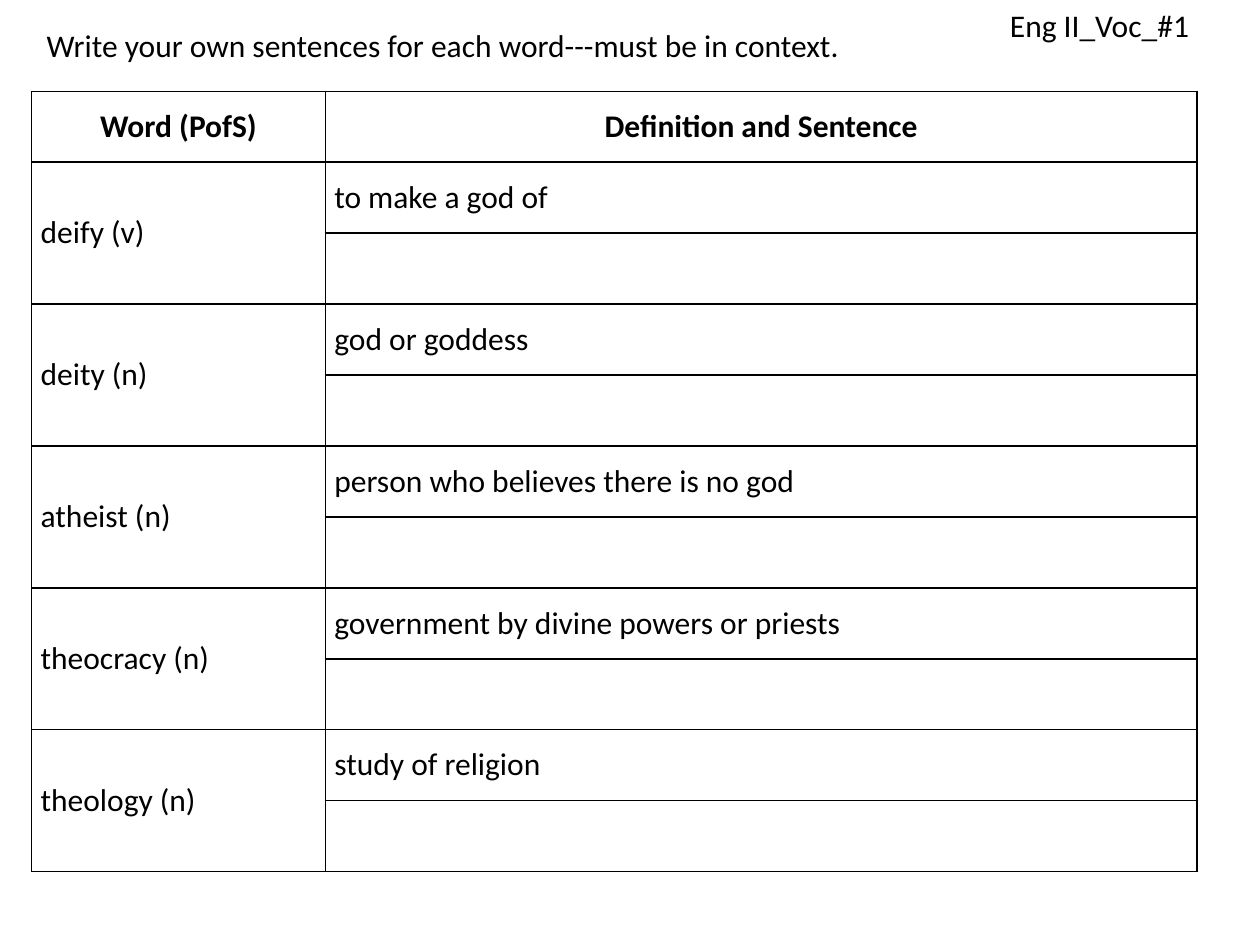
from lxml import etree
from pptx import Presentation
from pptx import util as u
from pptx.dml.color import RGBColor
from pptx.enum import text
from pptx.oxml import ns

BLACK = RGBColor(0, 0, 0)
WORDS = [
    ("deify (v)", "to make a god of"),
    ("deity (n)", "god or goddess"),
    ("atheist (n)", "person who believes there is no god"),
    ("theocracy (n)", "government by divine powers or priests"),
    ("theology (n)", "study of religion"),
]


class Sheet:
    font = {"name": "Calibri", "size": u.Pt(18)}
    border = u.Pt(1)

    def __init__(self, slide):
        self.s = slide

    def add_text(self, tf, content, bold=False, align=text.PP_ALIGN.LEFT):
        p = tf.paragraphs[0]
        p.alignment = align
        r = p.add_run()
        r.text = content
        for key, value in {**self.font, "bold": bold}.items():
            setattr(r.font, key, value)
        r.font.color.rgb = BLACK

    def label(self, content, x, y, w, h, wrap):
        sp = self.s.shapes.add_textbox(u.Cm(x), u.Cm(y), u.Cm(w), u.Cm(h))
        tf = sp.text_frame
        tf.word_wrap = wrap
        tf.auto_size = text.MSO_AUTO_SIZE.SHAPE_TO_FIT_TEXT
        self.add_text(tf, content)

    def outline(self, cell):
        tc_pr = cell._tc.get_or_add_tcPr()
        for i, side in enumerate(("lnL", "lnR", "lnT", "lnB")):
            ln = etree.Element(ns.qn(f"a:{side}"), w=str(self.border))
            fill = etree.SubElement(ln, ns.qn("a:solidFill"))
            etree.SubElement(fill, ns.qn("a:srgbClr"), val=str(BLACK))
            tc_pr.insert(i, ln)

    def cell(self, cell, content, inset, **style):
        layout = {
            "margin_left": u.Cm(inset),
            "margin_right": u.Cm(inset),
            "margin_top": 0,
            "margin_bottom": 0,
            "vertical_anchor": text.MSO_ANCHOR.MIDDLE,
        }
        for key, value in layout.items():
            setattr(cell, key, value)
        self.add_text(cell.text_frame, content, **style)

    def table(self, x, y, widths, row_height, headers, entries):
        rows = 1 + 2 * len(entries)
        sp = self.s.shapes.add_table(
            rows, len(widths), u.Cm(x), u.Cm(y),
            u.Cm(sum(widths)), u.Cm(rows * row_height))
        table = sp.table
        for flag in ("first_row", "horz_banding"):
            setattr(table, flag, False)
        for column, width in zip(table.columns, widths):
            column.width = u.Cm(width)
        for row in table.rows:
            row.height = u.Cm(row_height)
        for cell in table.iter_cells():
            cell.fill.background()
            self.outline(cell)
        for col, header in enumerate(headers):
            self.cell(table.cell(0, col), header, 0.1,
                      bold=True, align=text.PP_ALIGN.CENTER)
        for i, entry in enumerate(entries):
            top = 1 + 2 * i
            table.cell(top, 0).merge(table.cell(top + 1, 0))
            for col, content in enumerate(entry):
                self.cell(table.cell(top, col), content, 0.18)


def main():
    prs = Presentation()
    prs.slide_width, prs.slide_height = u.Cm(25.4), u.Cm(19.05)
    sheet = Sheet(prs.slides.add_slide(prs.slide_layouts[6]))
    sheet.table(0.64, 1.84, (5.92, 17.57), 1.43,
                ("Word (PofS)", "Definition and Sentence"), WORDS)
    sheet.label("Eng II_Voc_#1", 20.11, 0, 4.65, 1.03, True)
    sheet.label("Write your own sentences for each word---must be in context.",
                0.69, 0.41, 16.51, 1.03, False)
    prs.save("out.pptx")


if __name__ == "__main__":
    main()
